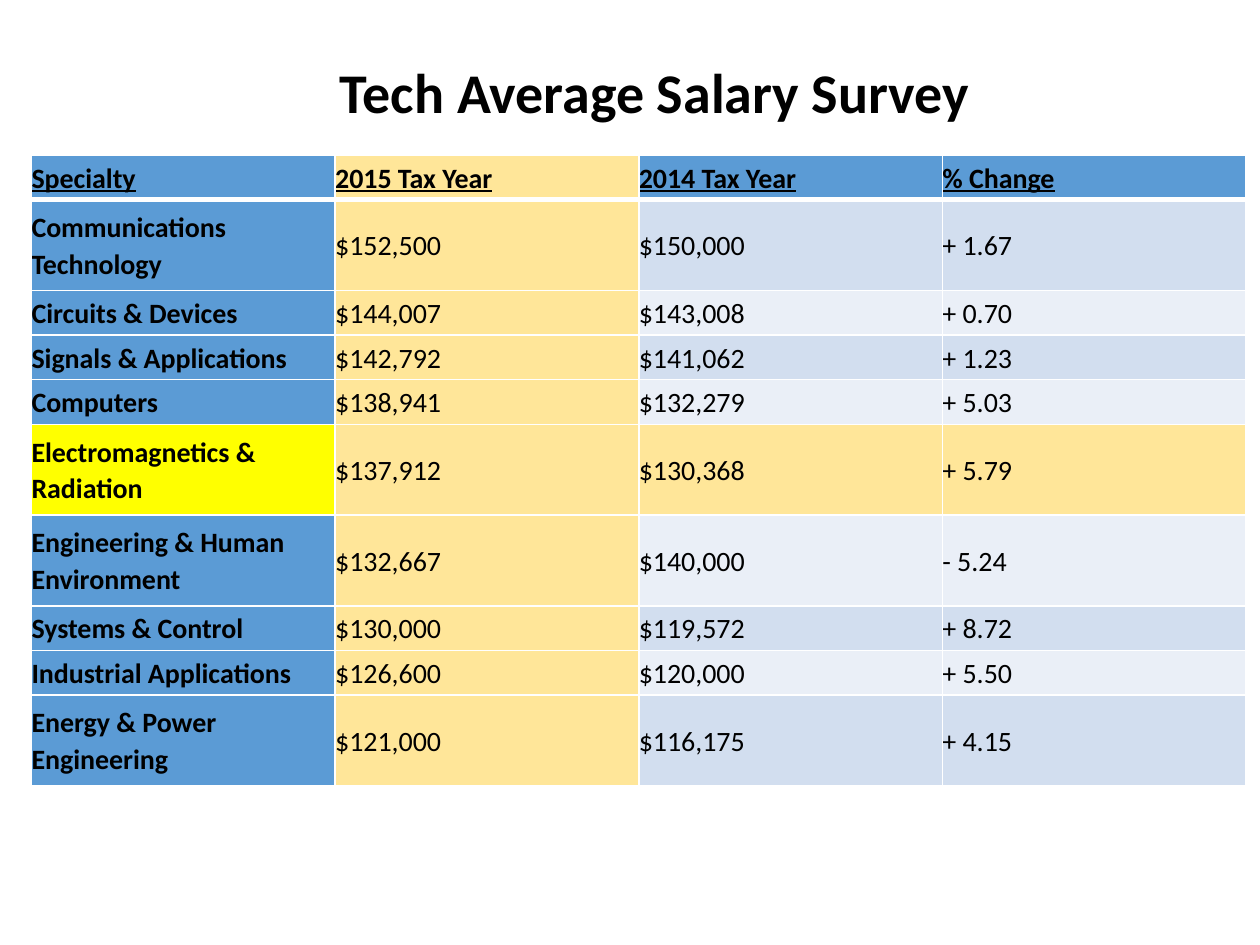
"""Build the salary survey slide: a title above a table of specialties."""
from typing import NamedTuple

from lxml import etree
from pptx import Presentation
from pptx import util as u
from pptx.dml.color import RGBColor
from pptx.enum import text
from pptx.oxml import ns

WHITE = RGBColor(0xFF, 0xFF, 0xFF)
BLACK = RGBColor(0x00, 0x00, 0x00)
BLUE = RGBColor(0x5B, 0x9B, 0xD5)
BANDS = (RGBColor(0xEA, 0xEF, 0xF7), RGBColor(0xD2, 0xDE, 0xEF))
GOLD = RGBColor(0xFF, 0xE6, 0x99)
YELLOW = RGBColor(0xFF, 0xFF, 0x00)

COLUMN = u.Inches(2.41)
LINE_HEIGHTS = {1: u.Inches(0.355), 2: u.Inches(0.72)}


class Salary(NamedTuple):
    """One table row and the number of lines its specialty takes."""
    specialty: str
    latest: str
    previous: str
    change: str
    lines: int = 1


HEADER = Salary("Specialty", "2015 Tax Year", "2014 Tax Year", "% Change")
SALARIES = (
    Salary("Communications Technology", "$152,500", "$150,000", "+ 1.67", 2),
    Salary("Circuits & Devices", "$144,007", "$143,008", "+ 0.70"),
    Salary("Signals & Applications", "$142,792", "$141,062", "+ 1.23"),
    Salary("Computers", "$138,941", "$132,279", "+ 5.03"),
    Salary("Electromagnetics & Radiation", "$137,912", "$130,368", "+ 5.79", 2),
    Salary("Engineering & Human Environment", "$132,667", "$140,000", "- 5.24", 2),
    Salary("Systems & Control", "$130,000", "$119,572", "+ 8.72"),
    Salary("Industrial Applications", "$126,600", "$120,000", "+ 5.50"),
    Salary("Energy & Power Engineering", "$121,000", "$116,175", "+ 4.15", 2),
)
HIGHLIGHT = "Electromagnetics & Radiation"


def apply(target, values: dict) -> None:
    """Set each named attribute on the target."""
    for name, value in values.items():
        setattr(target, name, value)


def style_font(font, size: int, bold: bool, underline: bool = False) -> None:
    """Give a font the slide's typeface and colour."""
    apply(font, {"name": "Calibri", "size": u.Pt(size), "bold": bold,
                 "underline": underline})
    font.color.rgb = BLACK


def add_borders(cell, widths: dict) -> None:
    """Draw white borders of the given point widths around a cell."""
    properties = cell._tc.get_or_add_tcPr()
    for side, points in widths.items():
        line = etree.SubElement(properties, ns.qn(f"a:{side}"), w=str(u.Pt(points)))
        solid = etree.SubElement(line, ns.qn("a:solidFill"))
        etree.SubElement(solid, ns.qn("a:srgbClr"), val=str(WHITE))


def cell_fill(salary: Salary, row: int, column: int) -> RGBColor:
    """Choose a cell's colour from its place in the table."""
    highlighted = salary.specialty == HIGHLIGHT
    if column == 0:
        return YELLOW if highlighted else BLUE
    if column == 1 or highlighted:
        return GOLD
    return BANDS[row % 2] if row else BLUE


def fill_cell(cell, salary: Salary, row: int, column: int) -> None:
    """Write and format one cell."""
    apply(cell, {"margin_left": 0, "margin_right": 0, "margin_top": 0,
                 "margin_bottom": 0, "text": salary[column],
                 "vertical_anchor": text.MSO_ANCHOR.MIDDLE})
    add_borders(cell, {"lnL": 1, "lnR": 1, "lnT": 3 if row == 1 else 1,
                       "lnB": 3 if row == 0 else 1})
    cell.fill.solid()
    cell.fill.fore_color.rgb = cell_fill(salary, row, column)
    paragraph = cell.text_frame.paragraphs[0]
    apply(paragraph, {"line_spacing": 1.07, "space_after": u.Pt(8)})
    style_font(paragraph.runs[0].font, 16, row == 0 or column == 0, row == 0)


def add_salary_table(slide) -> None:
    """Add the table with one row for each specialty."""
    rows = (HEADER, *SALARIES)
    columns = len(HEADER) - 1
    height = sum(LINE_HEIGHTS[salary.lines] for salary in rows)
    table = slide.shapes.add_table(len(rows), columns, u.Inches(0.25), u.Inches(1.23),
                                   columns * COLUMN, height).table
    for column in table.columns:
        column.width = COLUMN
    for row, salary in enumerate(rows):
        table.rows[row].height = LINE_HEIGHTS[salary.lines]
        for column in range(columns):
            fill_cell(table.cell(row, column), salary, row, column)


def add_title(slide, words: str) -> None:
    """Add the slide's heading."""
    frame = slide.shapes.add_textbox(u.Inches(2.6), u.Inches(0.41), u.Inches(5.26),
                                     u.Inches(0.64)).text_frame
    apply(frame, {"text": words, "word_wrap": True,
                  "auto_size": text.MSO_AUTO_SIZE.SHAPE_TO_FIT_TEXT})
    style_font(frame.paragraphs[0].runs[0].font, 32, True)


def main() -> None:
    """Build and save the presentation."""
    deck = Presentation()
    apply(deck, {"slide_width": u.Inches(10), "slide_height": u.Inches(7.5)})
    slide = deck.slides.add_slide(deck.slide_layouts[6])
    add_salary_table(slide)
    add_title(slide, "Tech Average Salary Survey")
    deck.save("out.pptx")


if __name__ == "__main__":
    main()
